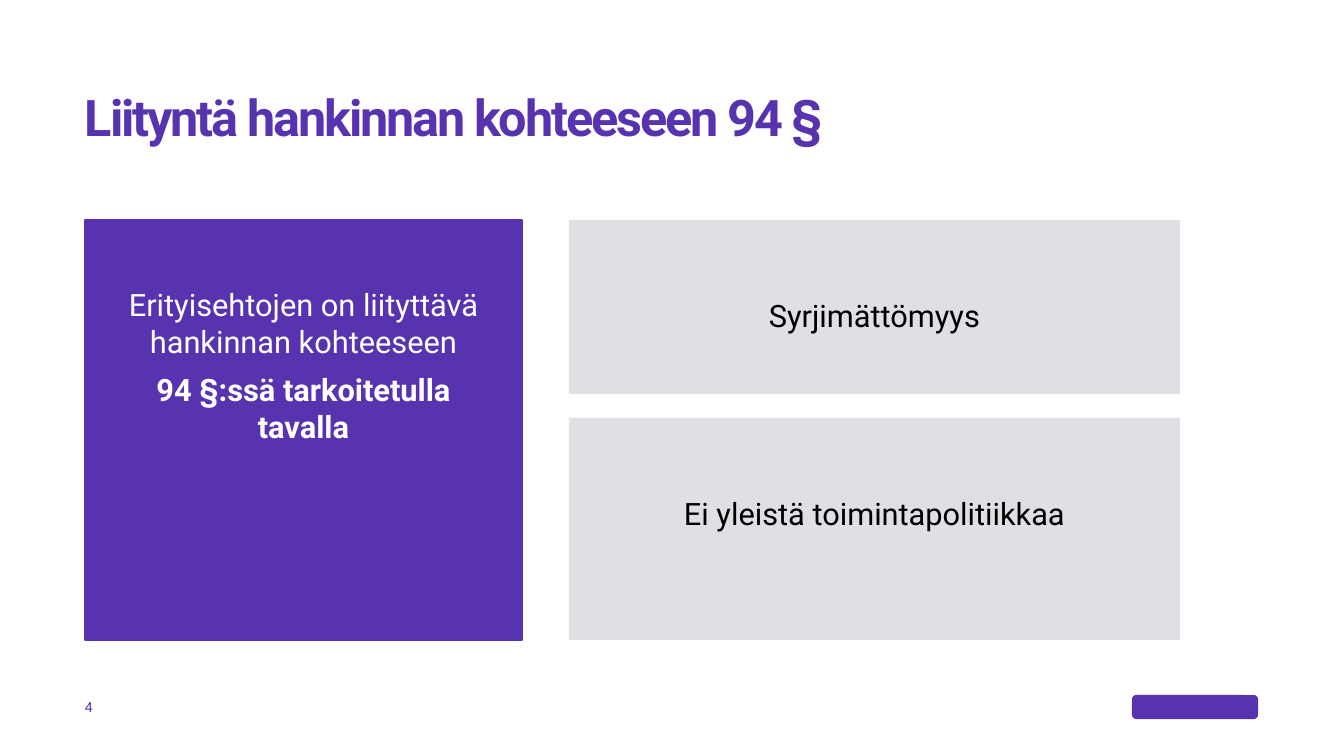
from lxml.etree import SubElement
from pptx import Presentation
from pptx.dml.color import RGBColor
from pptx.enum.shapes import MSO_SHAPE
from pptx.enum.text import MSO_ANCHOR, PP_ALIGN
from pptx.oxml.ns import qn
from pptx.util import Emu, Pt

COLORS = {"purple": "5733AF", "gray": "C5BFCA", "white": "FFFFFF", "black": "000000"}
PAD = 24


def px(n):
    return Emu(round(n * 914400 / 100.8))


def color(name):
    return RGBColor.from_string(COLORS[name])


def write(frame, lines, style, ink, inset=(0, 0, 0, 0), anchor=MSO_ANCHOR.TOP,
          align=PP_ALIGN.LEFT):
    """Fill a frame with (text, extra font values) lines."""
    sides = ("left", "top", "right", "bottom")
    setup = {f"margin_{side}": px(n) for side, n in zip(sides, inset)}
    setup.update(word_wrap=True, vertical_anchor=anchor)
    for key, value in setup.items():
        setattr(frame, key, value)
    for i, (text, extra) in enumerate(lines):
        para = frame.paragraphs[0] if i == 0 else frame.add_paragraph()
        para.alignment = align
        if i:
            para.space_before = Pt(8)
        run = para.add_run()
        run.text = text
        for key, value in {"name": "Roboto", **style, **extra}.items():
            setattr(run.font, key, value)
        run.font.color.rgb = color(ink)


def block(slide, box, fill, kind=MSO_SHAPE.RECTANGLE, alpha=None):
    shape = slide.shapes.add_shape(kind, *map(px, box))
    shape.shadow.inherit = False
    shape.fill.solid()
    shape.fill.fore_color.rgb = color(fill)
    shape.line.fill.background()
    if alpha:
        tint = shape.fill._xPr.find(".//" + qn("a:srgbClr"))
        SubElement(tint, qn("a:alpha")).set("val", str(alpha * 1000))
    return shape


def title(slide, box, text):
    frame = slide.shapes.add_textbox(*map(px, box)).text_frame
    write(frame, [(text, {"bold": True})], {"size": Pt(36)}, "purple")
    para = frame.paragraphs[0]
    para.line_spacing = 0.9
    para.runs[0]._r.get_or_add_rPr().set("spc", "-150")


def panel(slide, box, lines, fill, ink, top, alpha=None):
    shape = block(slide, box, fill, alpha=alpha)
    write(shape.text_frame, lines, {"size": Pt(22)}, ink,
          inset=(PAD, top, PAD, PAD), align=PP_ALIGN.CENTER)
    return shape


def body(slide, box):
    left, top, width, height = box
    # Main panel
    main = panel(slide, (left, top, 437, height), [
        ("Erityisehtojen on liityttävä hankinnan kohteeseen", {}),
        ("94 §:ssä tarkoitetulla tavalla", {"bold": True}),
    ], "purple", "white", 66)
    main.line.color.rgb = color("purple")
    main.line.width = Pt(1)
    # Side panels, stacked with a gap
    side = width - 611
    y = top
    for text, tall in (("Syrjimättömyys", 174), ("Ei yleistä toimintapolitiikkaa", 222)):
        panel(slide, (left + side, y, 611, tall), [(text, {})],
              "gray", "black", 77, alpha=50)
        y += tall + PAD


def footer(slide, box):
    left, top, width, height = box
    # Page number
    frame = slide.shapes.add_textbox(*map(px, (left, top, 47, height))).text_frame
    write(frame, [("4", {})], {"size": Pt(10)}, "purple", anchor=MSO_ANCHOR.MIDDLE)
    # Plain mark at the right end
    block(slide, (left + width - 126, top, 126, height), "purple",
          MSO_SHAPE.ROUNDED_RECTANGLE)


def main():
    deck = Presentation()
    deck.slide_width, deck.slide_height = px(1344), px(756)
    slide = deck.slides.add_slide(deck.slide_layouts[6])
    title(slide, (85, 93, 1175, 111), "Liityntä hankinnan kohteeseen 94 §")
    body(slide, (85, 220, 1095, 420))
    footer(slide, (85, 695, 1173, 24))
    deck.save("out.pptx")


if __name__ == "__main__":
    main()
